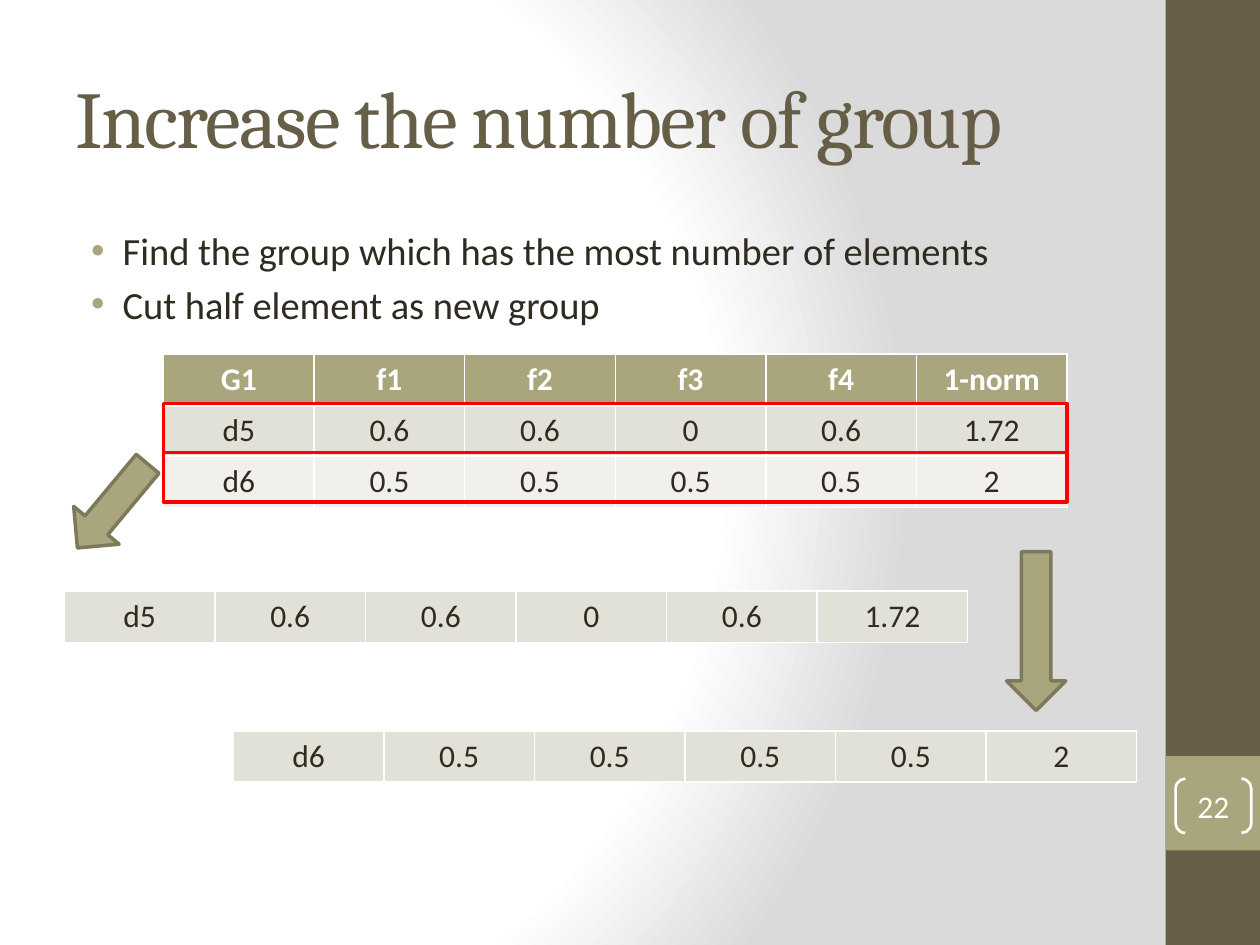
import pptx
import pptx.dml.color
import pptx.enum.shapes
import pptx.enum.text
import pptx.oxml
import pptx.oxml.ns
import pptx.util
from lxml import etree

Pt = pptx.util.Pt
RGBColor = pptx.dml.color.RGBColor
MSO_SHAPE = pptx.enum.shapes.MSO_SHAPE
PP_ALIGN = pptx.enum.text.PP_ALIGN
MSO_ANCHOR = pptx.enum.text.MSO_ANCHOR
qn = pptx.oxml.ns.qn

BROWN = RGBColor(0x67, 0x5E, 0x47)
OLIVE = RGBColor(0xA9, 0xA5, 0x7C)
DARK_OLIVE = RGBColor(0x7D, 0x7A, 0x5C)
INK = RGBColor(0x2F, 0x2B, 0x20)
WHITE = RGBColor(0xFF, 0xFF, 0xFF)
GREY = RGBColor(0xDA, 0xDA, 0xDA)
RED = RGBColor(0xFF, 0x00, 0x00)
BAND = RGBColor(0xE2, 0xE1, 0xD7)
PALE_BAND = RGBColor(0xF1, 0xF0, 0xEC)

ROW_HEIGHT = 29.2
TABLE_WIDTH = 516.2
HEADER = ["G1", "f1", "f2", "f3", "f4", "1-norm"]
D5 = ["d5", "0.6", "0.6", "0", "0.6", "1.72"]
D6 = ["d6", "0.5", "0.5", "0.5", "0.5", "2"]


def set_font(font, color, **values):
    font.color.rgb = color
    for name, value in values.items():
        setattr(font, name, value)


def points(box):
    return [Pt(length) for length in box]


def add_shape(slide, kind, box, fill=None, line=None, line_width=2, rotation=0):
    shape = slide.shapes.add_shape(kind, *points(box))
    shape.shadow.inherit = False
    shape.rotation = rotation
    if fill is None:
        shape.fill.background()
    else:
        shape.fill.solid()
        shape.fill.fore_color.rgb = fill
    if line is None:
        shape.line.fill.background()
    else:
        shape.line.color.rgb = line
        shape.line.width = Pt(line_width)
    return shape


def set_background(slide):
    """Fill the slide with a radial gradient, white at the left and grey at the right."""
    stops = "".join(
        f'<a:gs pos="{position * 1000}"><a:srgbClr val="{color}"/></a:gs>'
        for position, color in [(0, WHITE), (75, WHITE), (100, GREY)]
    )
    background = pptx.oxml.parse_xml(
        f'<p:bg {pptx.oxml.ns.nsdecls("p", "a")}><p:bgPr>'
        f'<a:gradFill rotWithShape="1"><a:gsLst>{stops}</a:gsLst><a:path path="circle">'
        '<a:fillToRect l="20000" t="50000" r="100000" b="50000"/></a:path></a:gradFill>'
        "<a:effectLst/></p:bgPr></p:bg>"
    )
    slide.element.cSld.insert(0, background)


def add_sidebar(slide, box, number):
    left, top, width, height = box
    add_shape(slide, MSO_SHAPE.RECTANGLE, box, BROWN)
    add_shape(slide, MSO_SHAPE.RECTANGLE, (left, top + 0.8 * height, width, width), OLIVE)
    bracket_box = (left + 5.8, top + 445, 43.2, 31)
    bracket = add_shape(slide, MSO_SHAPE.DOUBLE_BRACKET, bracket_box, line=WHITE, line_width=1.5)
    bracket.adjustments[0] = 0.18
    frame = bracket.text_frame
    frame.vertical_anchor = MSO_ANCHOR.MIDDLE
    for side in ("left", "top", "right", "bottom"):
        setattr(frame, f"margin_{side}", 0)
    paragraph = frame.paragraphs[0]
    paragraph.text = number
    paragraph.alignment = PP_ALIGN.CENTER
    set_font(paragraph.runs[0].font, WHITE, name="Calibri", size=Pt(18))


def set_title(slide, box, text):
    title = slide.shapes.title
    title.left, title.top, title.width, title.height = points(box)
    title.text_frame.vertical_anchor = MSO_ANCHOR.MIDDLE
    paragraph = title.text_frame.paragraphs[0]
    paragraph.text = text
    paragraph.alignment = PP_ALIGN.LEFT
    font = paragraph.runs[0].font
    set_font(font, BROWN, name="Cambria", size=Pt(46))
    paragraph.runs[0].font._element.set("spc", "-100")


def add_bullets(slide, box, lines):
    frame = slide.shapes.add_textbox(*points(box)).text_frame
    frame.word_wrap = True
    for index, line in enumerate(lines):
        paragraph = frame.add_paragraph() if index else frame.paragraphs[0]
        paragraph.text = line
        paragraph.space_before = Pt(4.4)
        set_font(paragraph.runs[0].font, INK, name="Calibri", size=Pt(22))
        properties = paragraph._p.get_or_add_pPr()
        properties.set("marL", str(Pt(27)))
        properties.set("indent", str(Pt(-18)))
        bullet_color = etree.SubElement(properties, qn("a:buClr"))
        etree.SubElement(bullet_color, qn("a:srgbClr"), val=str(OLIVE))
        etree.SubElement(properties, qn("a:buFont"), typeface="Arial")
        etree.SubElement(properties, qn("a:buChar"), char="•")


def set_borders(cell, top=1, bottom=1):
    """Draw white cell borders; the lines must precede the fill in the cell properties."""
    properties = cell._tc.get_or_add_tcPr()
    widths = {"a:lnL": 1, "a:lnR": 1, "a:lnT": top, "a:lnB": bottom}
    for index, (tag, width) in enumerate(widths.items()):
        line = etree.Element(qn(tag), w=str(Pt(width)))
        fill = etree.SubElement(line, qn("a:solidFill"))
        etree.SubElement(fill, qn("a:srgbClr"), val=str(WHITE))
        properties.insert(index, line)


def add_group_table(slide, left, top, rows, has_header=False):
    box = (left, top, TABLE_WIDTH, ROW_HEIGHT * len(rows))
    table = slide.shapes.add_table(len(rows), len(HEADER), *points(box)).table
    table.first_row = has_header
    fills = [OLIVE, BAND, PALE_BAND] if has_header else [BAND]
    for row_index, (values, fill) in enumerate(zip(rows, fills)):
        is_header = has_header and row_index == 0
        below_header = has_header and row_index == 1
        for column_index, value in enumerate(values):
            cell = table.cell(row_index, column_index)
            cell.fill.solid()
            cell.fill.fore_color.rgb = fill
            set_borders(cell, top=3 if below_header else 1, bottom=3 if is_header else 1)
            paragraph = cell.text_frame.paragraphs[0]
            paragraph.text = value
            paragraph.alignment = PP_ALIGN.CENTER
            color = WHITE if is_header else INK
            set_font(paragraph.runs[0].font, color, name="Calibri", size=Pt(18), bold=is_header)


def add_split_diagram(slide, left, top):
    """Show the group table and its two rows, each boxed in red and moved to a new group."""
    add_group_table(slide, left, top, [HEADER, D5, D6], has_header=True)
    for index in range(2):
        row_box = (left, top + 28.2 * (index + 1), TABLE_WIDTH, 28.2)
        add_shape(slide, MSO_SHAPE.RECTANGLE, row_box, line=RED)
    arrows = [((left - 46.1, top + 55.5, 33.8, 62.6), 39.8),
              ((left + 481.7, top + 113, 33.8, 90.7), 0)]
    for box, rotation in arrows:
        add_shape(slide, MSO_SHAPE.DOWN_ARROW, box, OLIVE, DARK_OLIVE, rotation=rotation)
    add_group_table(slide, left - 56.7, top + 135.5, [D5])
    add_group_table(slide, left + 39.8, top + 215.4, [D6])


def main():
    presentation = pptx.Presentation()
    presentation.slide_width, presentation.slide_height = Pt(720), Pt(540)
    slide = presentation.slides.add_slide(presentation.slide_layouts[5])
    set_background(slide)
    add_sidebar(slide, (666, 0, 54, 540), "22")
    set_title(slide, (36, 21.6, 600, 90), "Increase the number of group")
    add_bullets(slide, (36, 126, 600, 378), [
        "Find the group which has the most number of elements",
        "Cut half element as new group",
    ])
    add_split_diagram(slide, 93.5, 202.3)
    presentation.save("out.pptx")


if __name__ == "__main__":
    main()
